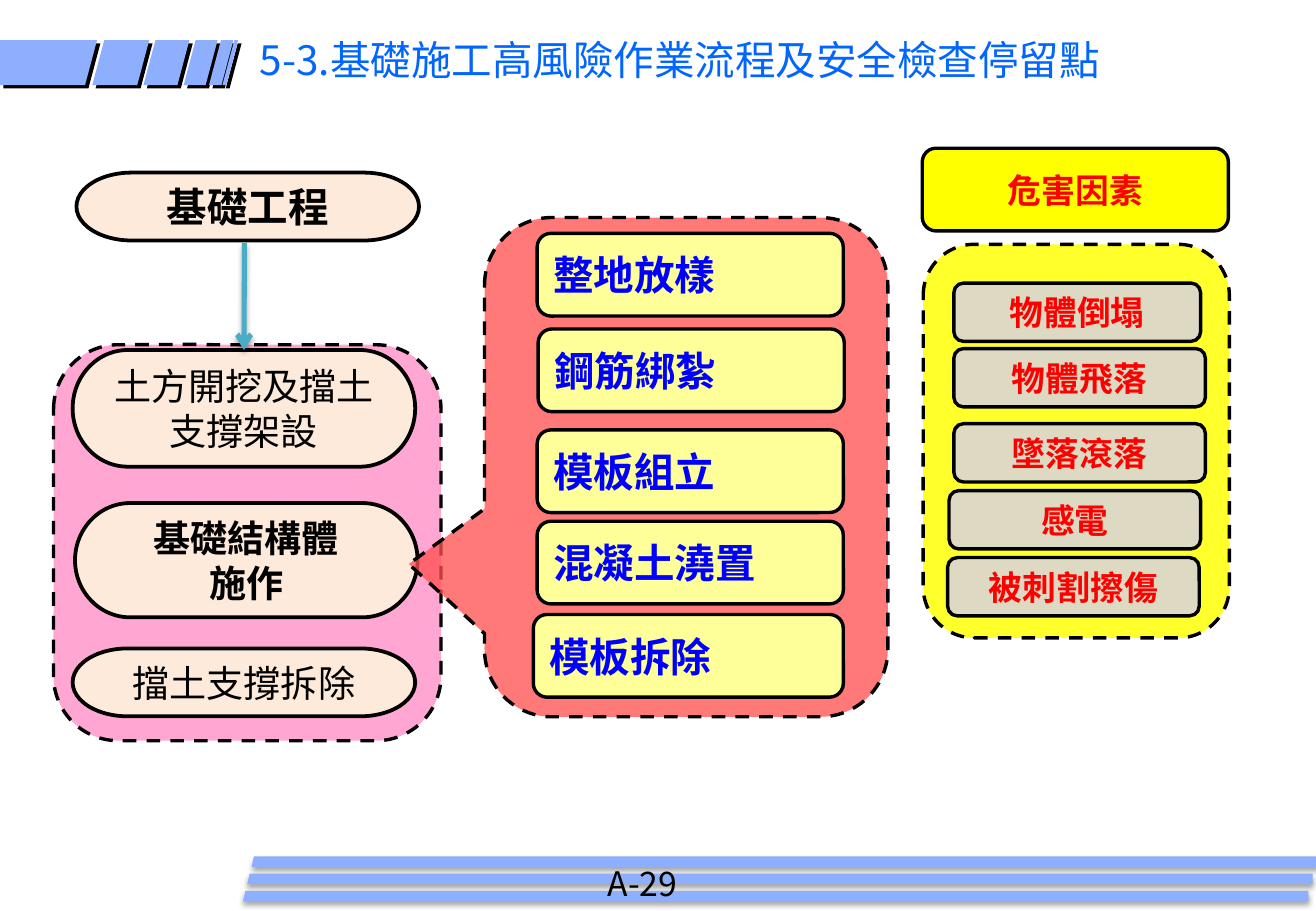
from lxml.etree import SubElement
from pptx import Presentation
from pptx.dml.color import RGBColor
from pptx.enum.dml import MSO_LINE
from pptx.enum.shapes import MSO_CONNECTOR, MSO_SHAPE as Preset
from pptx.enum.text import MSO_ANCHOR as Anchor, MSO_AUTO_SIZE as AutoSize, PP_ALIGN as Align
from pptx.oxml.ns import qn
from pptx.util import Cm, Pt

FONT = "Noto Sans CJK SC"
BLACK = RGBColor(0x00, 0x00, 0x00)
BAND_BLUE = RGBColor(0x8D, 0xAF, 0xFE)
TITLE_BLUE = RGBColor(0x00, 0x66, 0xFF)
STEP_BLUE = RGBColor(0x00, 0x00, 0xFF)
ARROW_TEAL = RGBColor(0x4B, 0xAC, 0xC6)
PINK = RGBColor(0xFF, 0x99, 0xCC)
CORAL = RGBColor(0xFF, 0x50, 0x50)
RED = RGBColor(0xFF, 0x00, 0x00)
YELLOW = RGBColor(0xFF, 0xFF, 0x00)
PALE_YELLOW = RGBColor(0xFF, 0xFF, 0x99)
CREAM = RGBColor(0xFD, 0xEA, 0xDA)
TAN = RGBColor(0xDD, 0xD9, 0xC3)

HEADER_BLOCKS = [(0, 2.03), (2.18, 3.12), (3.25, 3.96),
                 (4.09, 4.55), (4.62, 4.88), (4.9, 4.98)]
STEPS = [("整地放樣", 11.23, 4.88, 6.4), ("鋼筋綁紮", 11.25, 6.88, 6.4),
         ("模板組立", 11.23, 8.99, 6.4), ("混凝土澆置", 11.23, 10.9, 6.4),
         ("模板拆除", 11.15, 12.85, 6.48)]
HAZARDS = [("物體倒塌", 19.94, 5.92, 5.16), ("物體飛落", 19.94, 7.29, 5.26),
           ("墜落滾落", 19.94, 8.86, 5.26), ("感電", 19.84, 10.26, 5.26),
           ("被刺割擦傷", 19.81, 11.66, 5.26)]


def write_text(frame, text, size, color, bold=False, align=Align.CENTER,
               anchor=Anchor.MIDDLE, spacing=None, grow=False):
    """Fill a text frame, one paragraph per line of text."""
    frame.word_wrap = True
    frame.vertical_anchor = anchor
    frame.auto_size = AutoSize.SHAPE_TO_FIT_TEXT if grow else AutoSize.NONE
    frame.text = text
    for paragraph in frame.paragraphs:
        paragraph.alignment = align
        if spacing:
            paragraph.line_spacing = spacing
        for run in paragraph.runs:
            run.font.name = FONT
            run.font.size = Pt(size)
            run.font.bold = bold
            run.font.color.rgb = color
            SubElement(run.font._element, qn("a:ea"), typeface=FONT)


def add_shadow(item, opacity, blur, distance, angle):
    """Give a shape or connector a black outer shadow."""
    effects = SubElement(item._element.spPr, qn("a:effectLst"))
    outer = SubElement(effects, qn("a:outerShdw"), blurRad=str(Pt(blur)),
                       dist=str(Pt(distance)), dir=str(angle * 60000),
                       algn="tl", rotWithShape="0")
    black = SubElement(outer, qn("a:srgbClr"), val=str(BLACK))
    SubElement(black, qn("a:alpha"), val=str(opacity * 1000))


def add_band(slide, corners):
    """Draw a slanted blue band through corners given in centimetres."""
    points = [(Cm(x), Cm(y)) for x, y in corners]
    builder = slide.shapes.build_freeform(*points[0], scale=1.0)
    builder.add_line_segments(points[1:], close=True)
    band = builder.convert_to_shape()
    band.fill.solid()
    band.fill.fore_color.rgb = BAND_BLUE
    band.line.fill.background()
    return band


def add_box(slide, preset, place, fill, line_width=2):
    """Draw a filled preset shape with a black outline."""
    box = slide.shapes.add_shape(preset, *map(Cm, place))
    box.shadow.inherit = False
    box.fill.solid()
    box.fill.fore_color.rgb = fill
    box.line.color.rgb = BLACK
    box.line.width = Pt(line_width)
    return box


def add_callout(slide, place, fill, opacity, pointer):
    """Draw a translucent dashed callout with its pointer at a relative spot."""
    callout = add_box(slide, Preset.ROUNDED_RECTANGULAR_CALLOUT, place, fill)
    for index, value in enumerate((*pointer, 0.167)):
        callout.adjustments[index] = value
    callout.line.dash_style = MSO_LINE.DASH
    color = callout._element.spPr.find(qn("a:solidFill"))[0]
    SubElement(color, qn("a:alpha"), val=str(opacity * 1000))


def add_stage(slide, text, place, size=22, bold=False):
    """Draw a cream flow stage."""
    stage = add_box(slide, Preset.FLOWCHART_TERMINATOR, place, CREAM, 2.25)
    write_text(stage.text_frame, text, size, BLACK, bold=bold)
    return stage


def add_label(slide, text, place, fill, size, color, align=Align.CENTER):
    """Draw a rounded label with bold text."""
    label = add_box(slide, Preset.FLOWCHART_ALTERNATE_PROCESS, place, fill)
    write_text(label.text_frame, text, size, color, bold=True, align=align)


def add_arrow(slide, x, top, bottom, target):
    """Draw a shadowed arrow down to the top of a stage."""
    arrow = slide.shapes.add_connector(
        MSO_CONNECTOR.STRAIGHT, Cm(x), Cm(top), Cm(x), Cm(bottom))
    arrow.end_connect(target, 0)
    arrow.line.color.rgb = ARROW_TEAL
    arrow.line.width = Pt(3)
    SubElement(arrow.line._get_or_add_ln(), qn("a:tailEnd"), type="arrow")
    add_shadow(arrow, 35, 3.1, 1.8, 90)


def add_bands(slide):
    """Draw the footer stripes and the header blocks."""
    for row in range(3):
        left, top = 5.26 - 0.09 * row, 17.91 + 0.36 * row
        add_band(slide, [(left, top + 0.22), (left + 22.27, top + 0.22),
                         (left + 22.27, top), (left + 0.05, top)])
    for left, right in HEADER_BLOCKS:
        block = add_band(slide, [(left, 0.84), (right, 0.84),
                                 (right - 0.25, 1.78), (max(0, left - 0.25), 1.78)])
        add_shadow(block, 100, 0, 2.8, 45)


def add_title(slide, text):
    """Place and format the slide title."""
    title = slide.shapes.title
    title.left, title.top, title.width, title.height = map(Cm, (5.18, 0.81, 19.02, 1.07))
    write_text(title.text_frame, text, 24, TITLE_BLUE, align=Align.LEFT,
               anchor=Anchor.TOP, spacing=0.8, grow=True)


def main():
    """Build and save the slide."""
    deck = Presentation()
    deck.slide_width, deck.slide_height = Cm(27.51), Cm(19.05)
    slide = deck.slides.add_slide(deck.slide_layouts[5])

    add_bands(slide)
    add_title(slide, "5-3.基礎施工高風險作業流程及安全檢查停留點")
    page_number = slide.shapes.add_textbox(*map(Cm, (12.45, 17.91, 3.07, 1.12)))
    write_text(page_number.text_frame, "A-29", 20, BLACK, align=Align.LEFT,
               anchor=Anchor.TOP, grow=True)

    add_callout(slide, (1.12, 7.21, 8.1, 8.28), PINK, 87, (-0.131, -0.501))
    excavation = add_stage(slide, "土方開挖及擋土支撐架設", (1.52, 7.32, 7.16, 2.44))
    add_stage(slide, "擋土支撐拆除", (1.52, 13.56, 7.16, 1.42))
    add_stage(slide, "基礎結構體\n施作", (1.57, 10.52, 7.16, 2.39), bold=True)
    add_stage(slide, "基礎工程", (1.6, 3.61, 7.16, 1.42), size=24, bold=True)
    add_arrow(slide, 5.11, 5.08, 7.32, excavation)

    add_callout(slide, (10.13, 4.55, 8.43, 10.44), CORAL, 76, (-0.688, 0.194))
    for text, left, top, width in STEPS:
        add_label(slide, text, (left, top, width, 1.73), PALE_YELLOW, 24,
                  STEP_BLUE, align=Align.LEFT)

    add_label(slide, "危害因素", (19.28, 3.1, 6.4, 1.73), YELLOW, 20, RED)
    add_callout(slide, (19.3, 5.11, 6.4, 8.23), YELLOW, 83, (-0.286, -0.5))
    for text, left, top, width in HAZARDS:
        add_label(slide, text, (left, top, width, 1.22), TAN, 20, RED)

    deck.save("out.pptx")


if __name__ == "__main__":
    main()
